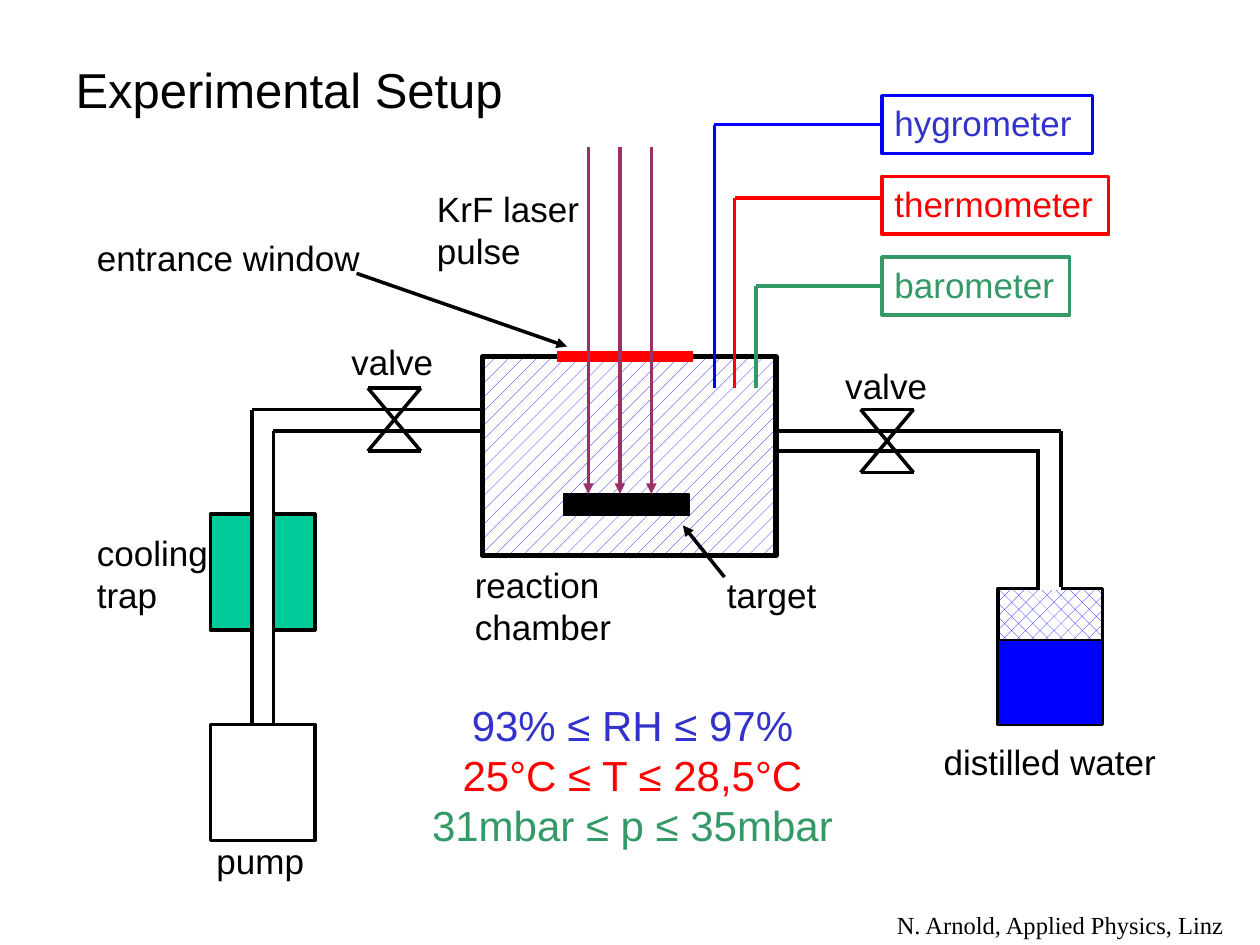
from lxml import etree
from pptx import Presentation
from pptx import util as u
from pptx.dml.color import RGBColor
from pptx.enum import dml, shapes, text
from pptx.oxml import ns

Inches = u.Inches
colour = RGBColor.from_string
BLACK, WHITE, BLUE, RED, GREEN = "000000", "FFFFFF", "0000FF", "FF0000", "339966"
LEFT, CENTER = text.PP_ALIGN.LEFT, text.PP_ALIGN.CENTER

deck = Presentation()
deck.slide_width, deck.slide_height = Inches(10), Inches(7.5)
slide = deck.slides.add_slide(deck.slide_layouts[5])


def draw_line(x1, y1, x2, y2, ink=BLACK, width=2, arrow=False):
    line = slide.shapes.add_connector(
        shapes.MSO_CONNECTOR.STRAIGHT, Inches(x1), Inches(y1), Inches(x2), Inches(y2))
    line.line.color.rgb = colour(ink)
    line.line.width = u.Pt(width)
    etree.SubElement(line._element.spPr, ns.qn("a:effectLst"))
    if arrow:
        etree.SubElement(line.line._get_or_add_ln(), ns.qn("a:tailEnd"), type="triangle")
    return line


def write(frame, rows, size=20, font="Arial", align=LEFT, wrap=False):
    frame_format = {"word_wrap": wrap, "vertical_anchor": text.MSO_ANCHOR.TOP,
                    "auto_size": text.MSO_AUTO_SIZE.SHAPE_TO_FIT_TEXT}
    for name, value in frame_format.items():
        setattr(frame, name, value)
    for i, (words, ink) in enumerate(rows):
        paragraph = frame.add_paragraph() if i else frame.paragraphs[0]
        paragraph.alignment = align
        run = paragraph.add_run()
        run.text = words
        for name, value in {"size": u.Pt(size), "name": font}.items():
            setattr(run.font, name, value)
        run.font.color.rgb = colour(ink)


title = slide.shapes.title
title_place = {"left": 0.5, "top": 0.42, "width": 3.83, "height": 0.57}
for side, inches in title_place.items():
    setattr(title, side, Inches(inches))
write(title.text_frame, [("Experimental Setup", BLACK)], size=28, wrap=True)

pipes = [
    (6.17, 3.42, 8.42, 3.42), (6.17, 3.58, 8.25, 3.58),
    (8.42, 3.42, 8.42, 4.67), (8.24, 3.58, 8.24, 4.67),
    (3.83, 3.42, 2.17, 3.42), (3.83, 3.25, 2, 3.25),
    (2, 3.25, 2, 5.75), (2.17, 3.42, 2.17, 5.75),
]
for pipe in pipes:
    draw_line(*pipe)

for left, top in [(2.92, 3.08), (6.83, 3.25)]:
    right, bottom = left + 0.42, top + 0.5
    draw_line(left, top, right, top)
    draw_line(left, bottom, right, bottom)
    draw_line(left, top, right, bottom)
    draw_line(right, top, left, bottom)

vessels = [
    (3.83, 2.83, 2.33, 1.58, dml.MSO_PATTERN.PERCENT_10, 3),
    (7.92, 4.67, 0.83, 1.08, dml.MSO_PATTERN.PERCENT_25, 2),
    (7.92, 5.08, 0.83, 0.67, BLUE, 0.75),
    (1.67, 5.75, 0.83, 0.92, None, 2),
    (2.17, 4.08, 0.33, 0.92, "00CC99", 2),
    (1.67, 4.08, 0.33, 0.92, "00CC99", 2),
    (4.47, 3.92, 1, 0.17, BLACK, 0.75),
]
for *place, filling, border in vessels:
    vessel = slide.shapes.add_shape(shapes.MSO_SHAPE.RECTANGLE, *map(Inches, place))
    vessel.shadow.inherit = False
    vessel.line.color.rgb = colour(BLACK)
    vessel.line.width = u.Pt(border)
    if filling is None:
        vessel.fill.background()
    elif isinstance(filling, str):
        vessel.fill.solid()
        vessel.fill.fore_color.rgb = colour(filling)
    else:
        vessel.fill.patterned()
        vessel.fill.pattern = filling
        vessel.fill.fore_color.rgb = colour(BLUE)
        vessel.fill.back_color.rgb = colour(WHITE)

draw_line(8.25, 4.67, 8.42, 4.67, WHITE)
draw_line(4.42, 2.83, 5.5, 2.83, RED, 6)
draw_line(5.75, 4.58, 5.42, 4.17, arrow=True)
draw_line(2.83, 2.17, 4.5, 2.75, arrow=True)
for beam in range(3):
    beam_x = 4.67 + 0.25 * beam
    draw_line(beam_x, 1.17, beam_x, 3.92, "993366", arrow=True)

meters = [
    ("hygrometer", 0.76, 1.67, 5.67, 0.99, BLUE, "3333CC", True),
    ("thermometer", 1.4, 1.8, 5.83, 1.57, RED, RED, False),
    ("barometer", 2.04, 1.49, 6, 2.27, GREEN, GREEN, True),
]
for name, top, width, probe_x, lead_y, ink, text_ink, joined in meters:
    meter = slide.shapes.add_shape(shapes.MSO_SHAPE.RECTANGLE, Inches(7), Inches(top),
                                   Inches(width), Inches(0.46))
    meter.shadow.inherit = False
    meter.fill.background()
    meter.line.color.rgb = colour(ink)
    meter.line.width = u.Pt(2)
    write(meter.text_frame, [(name, text_ink)])
    draw_line(probe_x, 3.08, probe_x, lead_y, ink)
    lead = draw_line(probe_x, lead_y, 7, lead_y, ink)
    if joined:
        lead.end_connect(meter, 1)

labels = [
    (1.62, 6.61, 0.9, 0.43, ["pump"]),
    (0.67, 4.17, 1.08, 0.77, ["cooling", "trap"]),
    (7.39, 5.83, 1.89, 0.43, ["distilled water"]),
    (0.67, 1.83, 2.33, 0.43, ["entrance window"]),
    (5.67, 4.5, 0.91, 0.43, ["target"]),
    (3.67, 4.42, 1.28, 0.77, ["reaction", "chamber"]),
    (2.69, 2.65, 0.85, 0.43, ["valve"]),
    (6.61, 2.84, 0.85, 0.43, ["valve"]),
    (3.37, 1.44, 1.33, 0.77, ["KrF laser", "pulse"]),
]
for *place, rows in labels:
    label = slide.shapes.add_textbox(*map(Inches, place))
    write(label.text_frame, [(row, BLACK) for row in rows], wrap=rows == ["entrance window"])

ranges = slide.shapes.add_textbox(Inches(3.33), Inches(5.5), Inches(3.38), Inches(1.3))
write(ranges.text_frame, [("93% ≤ RH ≤ 97%", "3333CC"), ("25°C ≤ T ≤ 28,5°C", RED),
                          ("31mbar ≤ p ≤ 35mbar", GREEN)], size=24, align=CENTER)

credit = slide.shapes.add_textbox(Inches(6.83), Inches(7.17), Inches(3.17), Inches(0.25))
write(credit.text_frame, [("N. Arnold, Applied Physics, Linz", BLACK)], size=14,
      font="Times New Roman", align=CENTER, wrap=True)
credit.text_frame.auto_size = text.MSO_AUTO_SIZE.NONE

deck.save("out.pptx")
